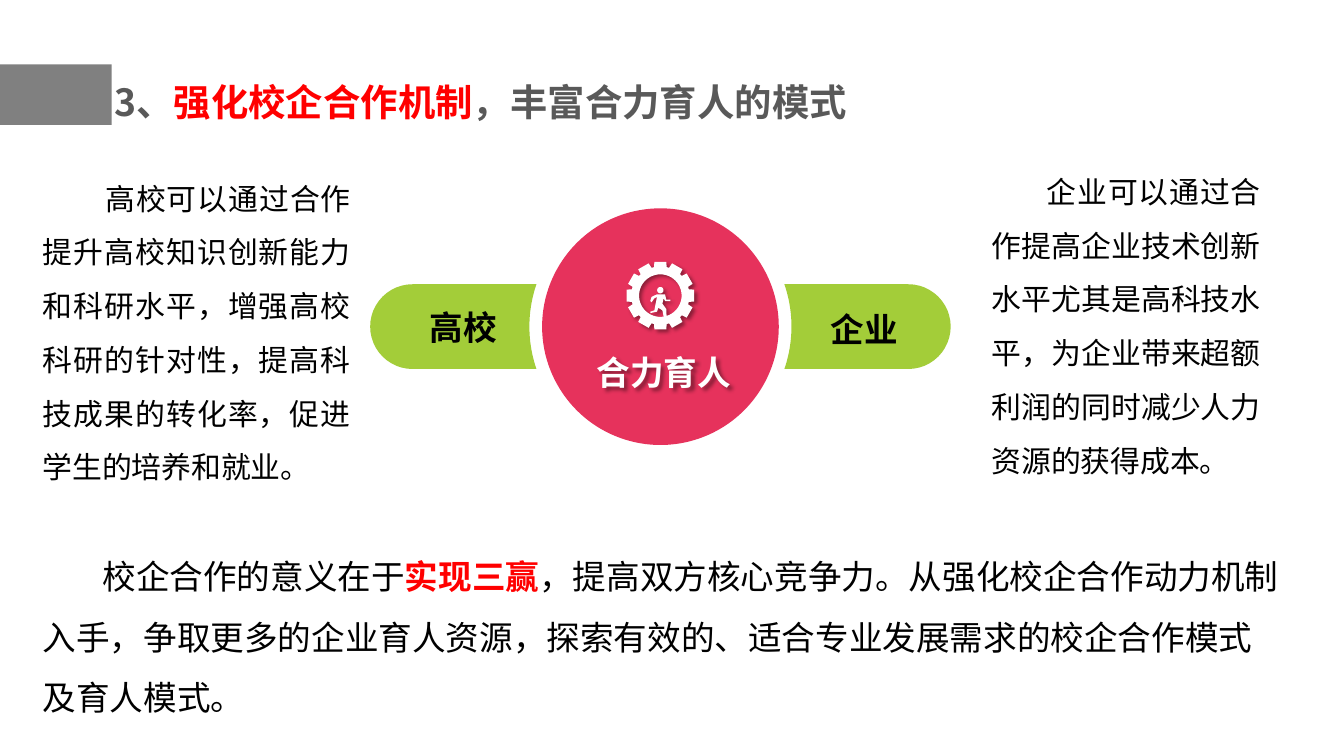
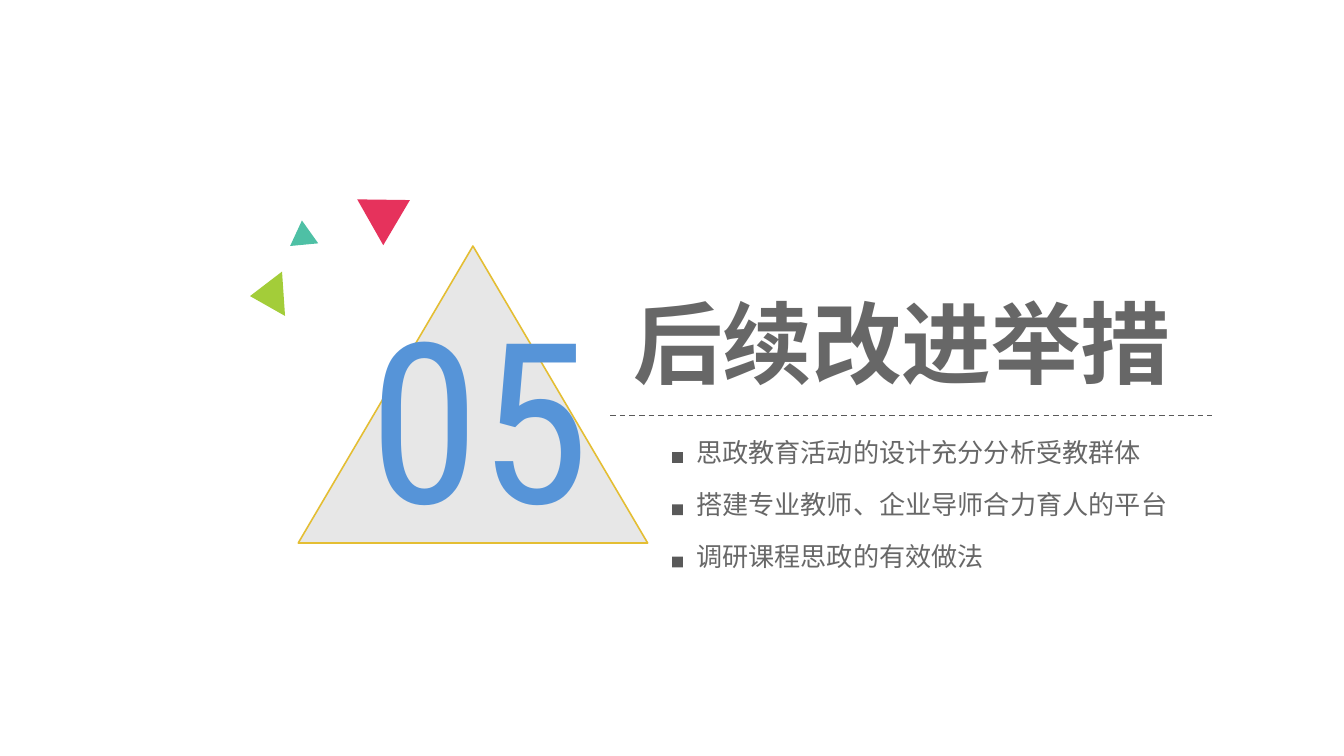
import math
from dataclasses import dataclass

from lxml import etree
from pptx import Presentation
from pptx import util as u
from pptx.dml.color import RGBColor
from pptx.enum import dml, shapes, text
from pptx.oxml import ns


@dataclass(frozen=True)
class Theme:
    # Colours
    black: str = "000000"
    white: str = "FFFFFF"
    grey: str = "595959"
    band: str = "808080"
    red: str = "FF0000"
    pink: str = "E6325C"
    green: str = "A3CD39"
    teal: str = "4EC0A5"
    gold: str = "E4BE33"
    blue: str = "5694D8"
    # Fonts
    heading: str = "Noto Sans CJK SC"
    body: str = "Noto Sans CJK JP"
    summary: str = "Arial"
    number: str = "Roboto Condensed"
    # Type sizes
    title_size: int = 20
    section_size: int = 48
    number_size: int = 120
    label_size: int = 18
    body_size: int = 16
    list_size: int = 14
    # Opacity of soft text, in percent
    soft: int = 91


THEME = Theme()


# XML helpers
def add_alpha(element, percent):
    color = next(element.iter(ns.qn("a:srgbClr")))
    etree.SubElement(color, ns.qn("a:alpha")).set("val", str(percent * 1000))


def add_shadow(shape):
    properties = shape.element.spPr
    for old in properties.findall(ns.qn("a:effectLst")):
        properties.remove(old)
    effects = etree.SubElement(properties, ns.qn("a:effectLst"))
    shadow = etree.SubElement(effects, ns.qn("a:outerShdw"))
    for name, value in (("blurRad", u.Pt(2)), ("dist", u.Pt(2)), ("dir", 45 * 60000)):
        shadow.set(name, str(value))
    color = etree.SubElement(shadow, ns.qn("a:srgbClr"))
    color.set("val", THEME.black)
    add_alpha(shadow, 40)


# Shapes
def place(shape, box):
    shape.left, shape.top, shape.width, shape.height = (u.Pt(value) for value in box)


def paint(shape, fill, line=None, alpha=None):
    shape.shadow.inherit = False
    shape.fill.solid()
    shape.fill.fore_color.rgb = RGBColor.from_string(fill)
    if alpha:
        add_alpha(shape.element.spPr, alpha)
    if line:
        shape.line.color.rgb = RGBColor.from_string(line)
        shape.line.width = u.Pt(0.85)
    else:
        shape.line.fill.background()


def add_preset(slide, kind, box, fill, rotation=0, line=None, alpha=None):
    shape = slide.shapes.add_shape(kind, *(u.Pt(value) for value in box))
    shape.rotation = rotation
    paint(shape, fill, line, alpha)
    return shape


def add_outline(slide, contours, fill):
    contours = [[(u.Pt(x), u.Pt(y)) for x, y in contour] for contour in contours]
    builder = slide.shapes.build_freeform(*contours[0][0])
    for index, contour in enumerate(contours):
        if index:
            builder.move_to(*contour[0])
        builder.add_line_segments(contour[1:], close=True)
    shape = builder.convert_to_shape()
    paint(shape, fill)
    return shape


def add_dashed_line(slide, left, right, top):
    line = slide.shapes.add_connector(
        shapes.MSO_CONNECTOR.STRAIGHT, u.Pt(left), u.Pt(top), u.Pt(right), u.Pt(top))
    line.line.color.rgb = RGBColor.from_string(THEME.grey)
    line.line.width = u.Pt(0.75)
    line.line.dash_style = dml.MSO_LINE.DASH
    etree.SubElement(line.element.spPr, ns.qn("a:effectLst"))


# Text
def format_run(run, font, size, color, bold=False, alpha=None):
    run.font.name = font
    run.font.size = u.Pt(size)
    run.font.bold = bold
    run.font.color.rgb = RGBColor.from_string(color)
    properties = run.font._element
    latin = properties.find(ns.qn("a:latin"))
    east_asian = etree.Element(ns.qn("a:ea"))
    east_asian.set("typeface", font)
    latin.addnext(east_asian)
    if alpha:
        add_alpha(properties, alpha)


def write(shape, parts, font, size, wrap=False, spacing=None, indent=0,
          align=text.PP_ALIGN.LEFT, alpha=None):
    """Fill a shape with one paragraph; parts are (words, color, bold)."""
    frame = shape.text_frame
    frame.word_wrap = wrap
    frame.auto_size = text.MSO_AUTO_SIZE.SHAPE_TO_FIT_TEXT
    frame.vertical_anchor = text.MSO_ANCHOR.TOP
    paragraph = frame.paragraphs[0]
    paragraph.alignment = align
    if spacing:
        paragraph.line_spacing = spacing
    if indent:
        properties = paragraph._p.get_or_add_pPr()
        properties.set("marL", "0")
        properties.set("indent", str(u.Pt(indent)))
    for words, color, bold in parts:
        run = paragraph.add_run()
        run.text = words
        format_run(run, font, size, color, bold, alpha)


def add_text(slide, box, parts, font, size, **options):
    shape = slide.shapes.add_textbox(*(u.Pt(value) for value in box))
    write(shape, parts, font, size, **options)
    return shape


def add_title(slide, box, parts, size, **options):
    place(slide.shapes.title, box)
    write(slide.shapes.title, parts, THEME.heading, size, **options)


def add_label(slide, box, words, color):
    return add_text(slide, box, [(words, color, True)], THEME.heading, THEME.label_size)


def add_body(slide, box, words, indent):
    add_text(slide, box, [(words, THEME.black, False)], THEME.body, THEME.body_size,
             wrap=True, spacing=1.5, indent=indent, align=text.PP_ALIGN.JUSTIFY)


# Outlines
def arc(center, radius, start, end, steps=24):
    angles = [math.radians(start + (end - start) * i / steps) for i in range(steps + 1)]
    return [(center[0] + radius * math.cos(a), center[1] + radius * math.sin(a))
            for a in angles]


def add_pills(slide, center):
    """Two rounded bars, hollowed around the central circle."""
    half, gap, cap = 22.7, 70.2, 132.8
    bend = math.degrees(math.asin(half / gap))
    right = (arc((center[0] + cap, center[1]), half, -90, 90)
             + arc(center, gap, bend, -bend))
    left = [(2 * center[0] - x, y) for x, y in right]
    add_outline(slide, [right, left], THEME.green)


def add_gear(slide, center):
    """Twelve-tooth gear with a runner in its hole."""
    teeth = []
    for angle in range(0, 360, 30):
        for offset, radius in ((-12.5, 15.6), (-10, 18.4), (10, 18.4), (12.5, 15.6)):
            teeth += arc(center, radius, angle + offset, angle + offset, 1)[:1]
    # Runner, as offsets from the centre: arms first, then the back leg
    arms = [(-5.4, 2.9), (-4.7, 0.7), (-1.8, -0.7), (2.5, -0.7), (3.2, 2.2), (5.4, 2.2),
            (5.4, 2.9), (2.5, 2.9), (1.8, 1.4), (1.1, 4.3), (3.2, 7.2)]
    legs = [(1.1, 7.9), (-1.1, 6.5), (-1.8, 8.6), (-5.4, 9.4), (-5.4, 8.6),
            (-3.2, 7.9), (-2.5, 4.3), (-1.8, 0.7), (-3.2, 1.4), (-4.7, 3.6)]

    def shift(points):
        return [(center[0] + x, center[1] + y) for x, y in points]

    hole = shift(arms) + arc(center, 11.4, 73, -279, 48) + shift(legs)
    head = arc((center[0], center[1] - 2.9), 1.7, 0, 360)
    add_shadow(add_outline(slide, [teeth, hole, head], THEME.white))


# Slides
def build_cooperation(slide):
    black, red, grey = THEME.black, THEME.red, THEME.grey
    add_preset(slide, shapes.MSO_SHAPE.RECTANGLE, (0, 34.5, 59.8, 32.4), THEME.band)
    add_title(slide, (54, 26.6, 471, 39.6),
              [("3、", grey, True), ("强化校企合作机制", red, True),
               ("，丰富合力育人的模式", grey, True)],
              THEME.title_size, wrap=True, spacing=1.5)

    # Central diagram
    center, radius = (353.8, 175), 63.4
    add_pills(slide, center)
    add_preset(slide, shapes.MSO_SHAPE.OVAL,
               (center[0] - radius, center[1] - radius, 2 * radius, 2 * radius), THEME.pink)
    add_gear(slide, (353.8, 158.4))
    add_shadow(add_label(slide, (312.5, 185, 87, 29), "合力育人", THEME.white))
    add_label(slide, (223.2, 160.6, 51, 29), "高校", black)
    add_label(slide, (437.8, 162, 51, 29), "企业", black)

    # Side texts
    add_body(slide, (15.8, 83.5, 179.3, 179.3),
             "高校可以通过合作提升高校知识创新能力和科研水平，增强高校科研的针对性，"
             "提高科技成果的转化率，促进学生的培养和就业。", 33.5)
    add_body(slide, (524.2, 79.9, 158.4, 179.3),
             "企业可以通过合作提高企业技术创新水平尤其是高科技水平，"
             "为企业带来超额利润的同时减少人力资源的获得成本。", 29.5)

    # Summary
    add_text(slide, (15.8, 283.7, 678.2, 100),
             [("校企合作的意义在于", black, False), ("实现三赢", red, True),
              ("，提高双方核心竞争力。从强化校企合作动力机制入手，争取更多的企业育人资源，"
               "探索有效的、适合专业发展需求的校企合作模式及育人模式。", black, False)],
             THEME.summary, THEME.label_size, wrap=True, spacing=1.5, indent=32)


def build_section(slide):
    triangle = shapes.MSO_SHAPE.ISOSCELES_TRIANGLE
    add_title(slide, (331.9, 150.5, 305.3, 65.5), [("后续改进举措", THEME.grey, True)],
              THEME.section_size, alpha=THEME.soft)

    # Section number
    add_preset(slide, triangle, (159.8, 131.8, 187.2, 159.1), THEME.grey,
               line=THEME.gold, alpha=14)
    add_text(slide, (190.8, 146.2, 144.7, 152.6), [("05", THEME.blue, False)],
             THEME.number, THEME.number_size)
    for box, rotation, color in (
            ((187.9, 100.8, 28.1, 24.5), 300.6, THEME.pink),
            ((154.8, 118.1, 15.1, 13), 354.7, THEME.teal),
            ((131, 149, 23.8, 18), 266.1, THEME.green)):
        add_preset(slide, triangle, box, color, rotation)

    # Measures
    add_dashed_line(slide, 326.9, 649.4, 222.5)
    measures = (("思政教育活动的设计充分分析受教群体", 254.9),
                ("搭建专业教师、企业导师合力育人的平台", 269.3),
                ("调研课程思政的有效做法", 169.9))
    for index, (words, width) in enumerate(measures):
        top = 230 + 28 * index
        add_preset(slide, shapes.MSO_SHAPE.RECTANGLE, (360, top + 12.2, 5.8, 5.8), THEME.grey)
        add_text(slide, (365.8, top, width, 24.5), [(words, THEME.grey, False)],
                 THEME.heading, THEME.list_size, alpha=THEME.soft)


def main():
    presentation = Presentation()
    presentation.slide_width, presentation.slide_height = u.Pt(720), u.Pt(405)
    title_only = presentation.slide_layouts[5]
    for build in (build_cooperation, build_section):
        build(presentation.slides.add_slide(title_only))
    presentation.save("out.pptx")


if __name__ == "__main__":
    main()
